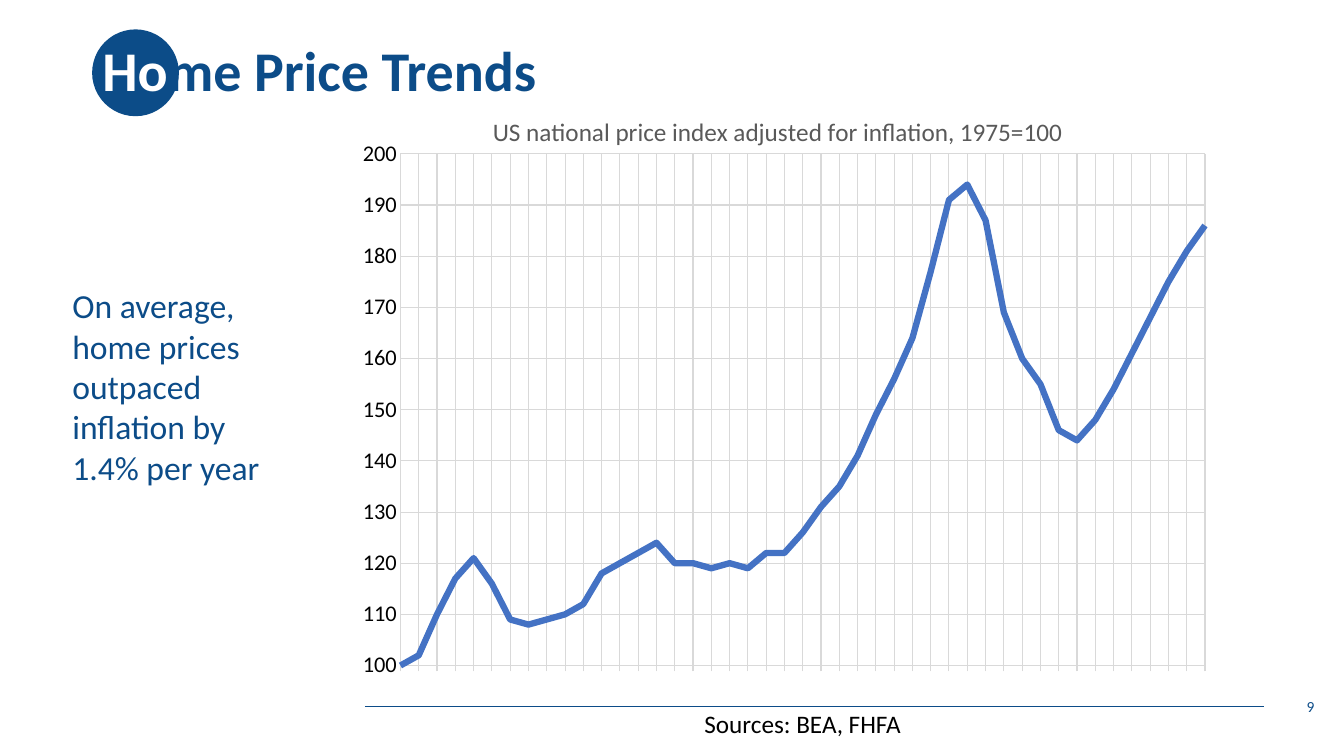
from lxml import etree
from pptx import Presentation
from pptx.chart.data import CategoryChartData
from pptx.dml.color import RGBColor
from pptx.enum.chart import XL_CHART_TYPE as CT, XL_TICK_LABEL_POSITION as TL, XL_TICK_MARK as TM
from pptx.enum.shapes import MSO_CONNECTOR as MC, MSO_SHAPE as MS
from pptx.enum.text import MSO_ANCHOR as MA, PP_ALIGN as PA
from pptx.oxml.ns import qn
from pptx.util import Pt

COLORS = {"navy": "0C4C88", "blue": "4472C4", "gray": "595959",
          "grid": "D9D9D9", "black": "000000", "white": "FFFFFF"}

PRICES = [100, 102, 110, 117, 121, 116, 109, 108, 109, 110, 112, 118, 120, 122, 124,
          120, 120, 119, 120, 119, 122, 122, 126, 131, 135, 141, 149, 156, 164, 177,
          191, 194, 187, 169, 160, 155, 146, 144, 148, 154, 161, 168, 175, 181, 186]


class SlideBuilder:
    font = "Calibri"

    def __init__(self, slide):
        self.s = slide

    def color(self, name):
        return RGBColor.from_string(COLORS[name])

    def style(self, font, size, color, bold=False):
        font.name, font.size, font.bold = self.font, Pt(size), bold
        font.color.rgb = self.color(color)

    def stroke(self, line, color, width):
        line.color.rgb = self.color(color)
        line.width = Pt(width)

    def rule(self, x1, x2, y):
        line = self.s.shapes.add_connector(MC.STRAIGHT, Pt(x1), Pt(y), Pt(x2), Pt(y))
        self.stroke(line.line, "navy", 0.5)
        etree.SubElement(line._element.spPr, qn("a:effectLst"))

    def disc(self, x, y, size):
        sp = self.s.shapes.add_shape(MS.OVAL, Pt(x), Pt(y), Pt(size), Pt(size))
        sp.shadow.inherit = False
        sp.fill.solid()
        sp.fill.fore_color.rgb = self.color("navy")
        sp.line.fill.background()

    def title(self, parts, x, y, w, h):
        sp = self.s.shapes.title
        sp.left, sp.top, sp.width, sp.height = Pt(x), Pt(y), Pt(w), Pt(h)
        self.s.shapes._spTree.append(sp._element)
        sp.text_frame.vertical_anchor = MA.MIDDLE
        p = sp.text_frame.paragraphs[0]
        p.alignment, p.line_spacing = PA.LEFT, 0.9
        for text, color in parts:
            r = p.add_run()
            r.text = text
            r.font.color.rgb = self.color(color)
        p.font.name, p.font.size, p.font.bold = self.font, Pt(40), True

    def text(self, text, x, y, w, h, size, color, align=PA.LEFT, anchor=MA.TOP, wrap=True):
        tf = self.s.shapes.add_textbox(Pt(x), Pt(y), Pt(w), Pt(h)).text_frame
        tf.word_wrap, tf.vertical_anchor = wrap, anchor
        p = tf.paragraphs[0]
        p.text, p.alignment = text, align
        self.style(p.font, size, color)

    def place(self, parent, **values):
        layout = parent.find(qn("c:layout"))
        if layout is None:
            layout = etree.Element(qn("c:layout"))
            parent.insert(0, layout)
        manual = etree.SubElement(layout, qn("c:manualLayout"))
        for tag, value in values.items():
            etree.SubElement(manual, qn(f"c:{tag}")).set("val", str(value))

    def line_chart(self, title, first_year, values, x, y, w, h):
        data = CategoryChartData()
        data.categories = [str(first_year + i) for i in range(len(values))]
        data.add_series("Series 1", values)
        chart = self.s.shapes.add_chart(CT.LINE, Pt(x), Pt(y), Pt(w), Pt(h), data).chart
        self.style(chart.font, 10, "black")
        chart.has_legend = False
        chart.has_title = True
        p = chart.chart_title.text_frame.paragraphs[0]
        p.text = title
        self.style(p.font, 18, "gray")
        self.place(chart.chart_title._element, xMode="edge", yMode="edge", x=0.2, y=0.03)
        plot_area = chart._chartSpace.chart.plotArea
        self.place(plot_area, layoutTarget="inner", xMode="edge", yMode="edge",
                   x=0.108, y=0.101, w=0.843, h=0.831)

        cats, vals = chart.category_axis, chart.value_axis
        for axis, size, color in ((cats, 14, "gray"), (vals, 16, "black")):
            self.style(axis.tick_labels.font, size, color)
            axis.has_major_gridlines = True
            self.stroke(axis.major_gridlines.format.line, "grid", 0.75)
            axis.minor_tick_mark = TM.NONE
        cats.tick_label_position = TL.NONE
        cats.major_tick_mark = TM.CROSS
        self.stroke(cats.format.line, "grid", 0.75)
        vals.minimum_scale, vals.maximum_scale, vals.major_unit = 100, 200, 10
        vals.major_tick_mark = TM.NONE
        vals.format.line.fill.background()
        cross = vals._element.find(qn("c:crossBetween"))
        if cross is None:
            cross = etree.Element(qn("c:crossBetween"))
            vals._element.find(qn("c:crosses")).addnext(cross)
        cross.set("val", "midCat")

        plot = chart.plots[0]
        plot.vary_by_categories = False
        series = plot.series[0]
        series.smooth = False
        self.stroke(series.format.line, "blue", 4.5)


def main():
    prs = Presentation()
    prs.slide_width, prs.slide_height = Pt(960), Pt(540)
    b = SlideBuilder(prs.slides.add_slide(prs.slide_layouts[5]))
    b.rule(260.6, 902.9, 504.7)
    b.disc(65.8, 21, 62)
    b.title([("Ho", "white"), ("me Price Trends", "navy")], 66, 0, 828, 104.4)
    b.text("9", 730, 490.3, 216, 28.8, 11, "navy", PA.RIGHT, MA.MIDDLE)
    b.text("On average, home prices outpaced inflation by 1.4% per year",
           44.6, 200.2, 158.4, 152.6, 24, "navy")
    b.text("Sources: BEA, FHFA", 496.1, 502.6, 156.2, 28.8, 18, "black", wrap=False)
    b.line_chart("US national price index adjusted for inflation, 1975=100",
                 1975, PRICES, 212.4, 65.5, 681.8, 439.9)
    prs.save("out.pptx")


if __name__ == "__main__":
    main()
